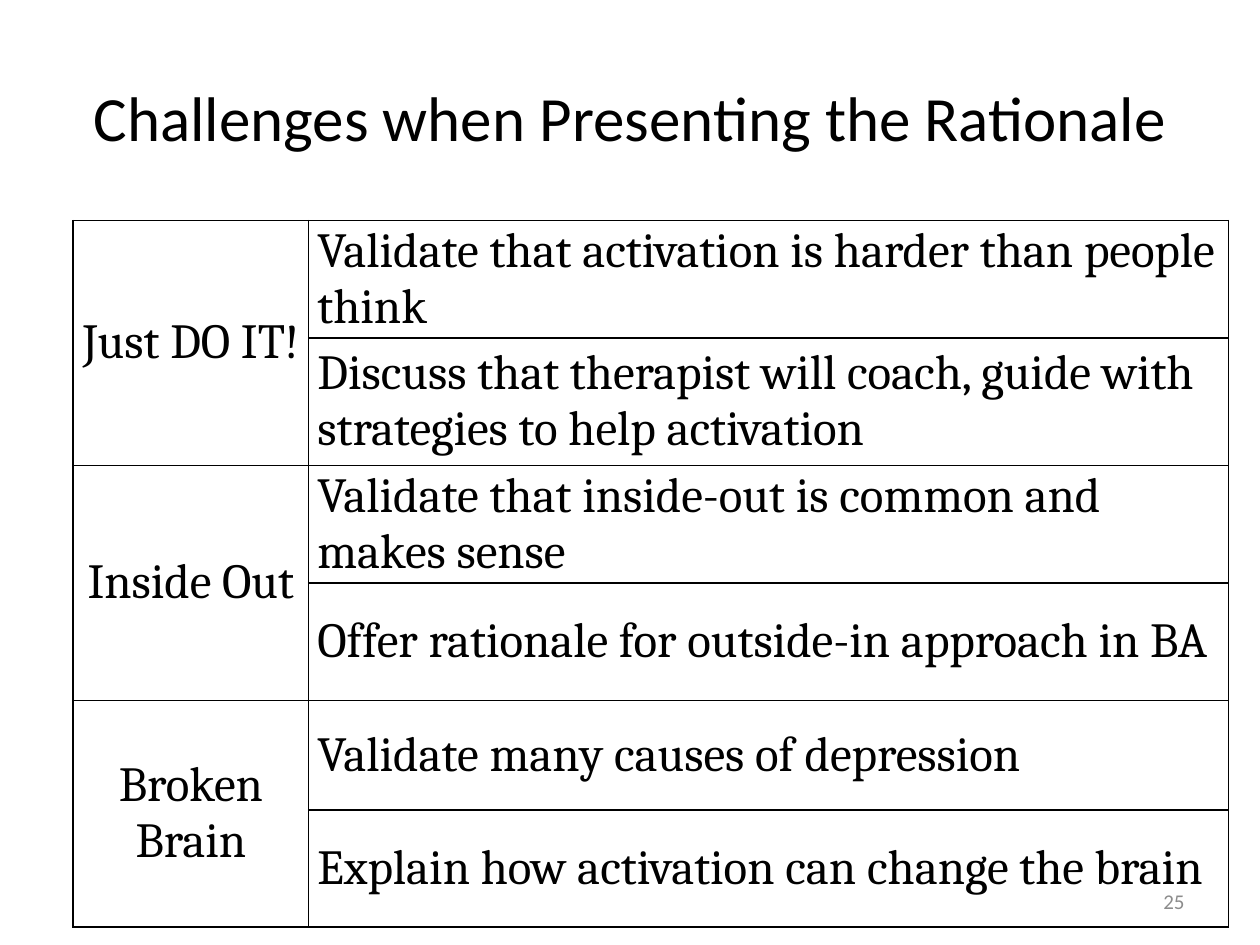
"""Build the slide on challenges when presenting the rationale."""
from lxml import etree
from pptx import Presentation
from pptx import util as u
from pptx.dml.color import RGBColor
from pptx.enum import text
from pptx.oxml import ns

BLACK = RGBColor(0, 0, 0)
GREY = RGBColor(0x8C, 0x8C, 0x8C)
TITLE = "Challenges when Presenting the Rationale"
PAGE_NUMBER = "25"
CHALLENGES = [
    ("Just DO IT!", [
        "Validate that activation is harder than people think",
        "Discuss that therapist will coach, guide with strategies to help activation",
    ]),
    ("Inside Out", [
        "Validate that inside-out is common and makes sense",
        "Offer rationale for outside-in approach in BA",
    ]),
    ("Broken Brain", [
        "Validate many causes of depression",
        "Explain how activation can change the brain",
    ]),
]
COLUMN_WIDTHS = [1.87, 7.3]
ROW_HEIGHTS = [0.93, 1.01, 0.93, 0.93, 0.87, 0.93]


def write(frame, content, font_name, size, color, alignment):
    frame.text = content
    frame.word_wrap = True
    frame.vertical_anchor = text.MSO_ANCHOR.MIDDLE
    paragraph = frame.paragraphs[0]
    paragraph.alignment = alignment
    font = paragraph.runs[0].font
    font.name, font.size, font.color.rgb = font_name, u.Pt(size), color


def add_borders(cell):
    properties = cell._tc.get_or_add_tcPr()
    for position, side in enumerate(("lnL", "lnR", "lnT", "lnB")):
        line = etree.Element(ns.qn(f"a:{side}"), w=str(u.Pt(1)))
        fill = etree.SubElement(line, ns.qn("a:solidFill"))
        etree.SubElement(fill, ns.qn("a:srgbClr"), val=str(BLACK))
        properties.insert(position, line)


def fill_cell(cell, content, alignment):
    cell.margin_left = cell.margin_right = u.Inches(0.07)
    cell.margin_top = cell.margin_bottom = 0
    cell.vertical_anchor = text.MSO_ANCHOR.MIDDLE
    cell.text = content
    paragraph = cell.text_frame.paragraphs[0]
    paragraph.alignment = alignment
    font = paragraph.runs[0].font
    font.name, font.size, font.color.rgb = "Cambria", u.Pt(28), BLACK


def add_challenges(slide):
    frame = slide.shapes.add_table(
        len(ROW_HEIGHTS), len(COLUMN_WIDTHS), u.Inches(0.58), u.Inches(1.75),
        u.Inches(sum(COLUMN_WIDTHS)), u.Inches(sum(ROW_HEIGHTS)))
    table = frame.table
    table.first_row = table.horz_banding = False
    for column, width in zip(table.columns, COLUMN_WIDTHS):
        column.width = u.Inches(width)
    for row, height in zip(table.rows, ROW_HEIGHTS):
        row.height = u.Inches(height)
    for cell in table.iter_cells():
        cell.fill.background()
        add_borders(cell)
    row = 0
    for challenge, responses in CHALLENGES:
        heading = table.cell(row, 0)
        heading.merge(table.cell(row + len(responses) - 1, 0))
        fill_cell(heading, challenge, text.PP_ALIGN.CENTER)
        for response in responses:
            fill_cell(table.cell(row, 1), response, text.PP_ALIGN.LEFT)
            row += 1


def main():
    presentation = Presentation()
    presentation.slide_width, presentation.slide_height = u.Inches(10), u.Inches(7.5)
    slide = presentation.slides.add_slide(presentation.slide_layouts[5])
    title = slide.shapes.title
    title.left, title.top = u.Inches(0.5), u.Inches(0.3)
    title.width, title.height = u.Inches(9), u.Inches(1.25)
    write(title.text_frame, TITLE, "Calibri", 36, BLACK, text.PP_ALIGN.CENTER)
    number = slide.shapes.add_textbox(
        u.Inches(7.17), u.Inches(6.95), u.Inches(2.33), u.Inches(0.4))
    write(number.text_frame, PAGE_NUMBER, "Calibri", 12, GREY, text.PP_ALIGN.RIGHT)
    add_challenges(slide)
    presentation.save("out.pptx")


if __name__ == "__main__":
    main()
